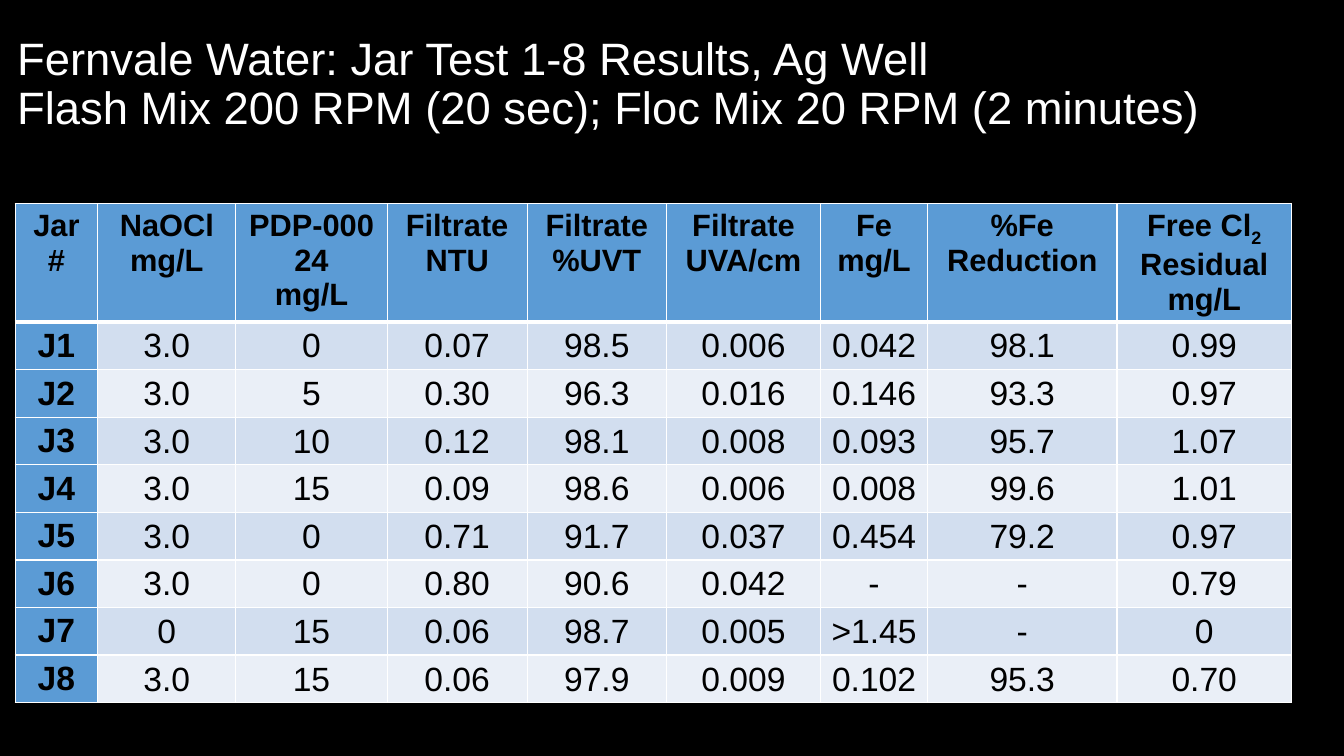
from copy import deepcopy
from pptx import Presentation, util as u
from pptx.dml.color import RGBColor
from pptx.enum import text as t
from pptx.oxml import parse_xml
from pptx.oxml.ns import nsdecls, qn


def write(frame, words, size, hue, bold=False, align=t.PP_ALIGN.LEFT, space=1):
    """Newline starts a paragraph, \\v breaks a line, _ lowers what follows."""
    frame.clear()
    for i, line in enumerate(words.split("\n")):
        para = frame.paragraphs[0] if i == 0 else frame.add_paragraph()
        para.alignment, para.line_spacing = align, space
        for j, part in enumerate(line.split("\v")):
            if j:
                para.add_line_break()
            for k, piece in enumerate(part.split("_")):
                run = para.add_run()
                run.text = piece
                font = run.font
                font.name, font.size, font.bold = "Arial", u.Pt(size), bold
                font.color.rgb = RGBColor.from_string(hue)
                if k:
                    run._r.get_or_add_rPr().set("baseline", "-25000")
        # Line breaks take the format of the text
        for gap in para._p.findall(qn("a:br")):
            gap.append(deepcopy(para.runs[0]._r.rPr))


def edge(cell, top, base):
    """Draw white borders; top and base widths in points."""
    for side, width in (("L", 1), ("R", 1), ("T", top), ("B", base)):
        cell._tc.get_or_add_tcPr().append(parse_xml(
            f'<a:ln{side} {nsdecls("a")} w="{u.Pt(width)}"><a:solidFill>'
            f'<a:srgbClr val="FFFFFF"/></a:solidFill></a:ln{side}>'))


# Slide with black ground
deck = Presentation()
deck.slide_width, deck.slide_height = u.Inches(13.33), u.Inches(7.5)
slide = deck.slides.add_slide(deck.slide_layouts[5])
ground = slide.background.fill
ground.solid()
ground.fore_color.rgb = RGBColor.from_string("000000")

# Title
title = slide.shapes.title
title.left, title.top = u.Inches(0.07), u.Inches(0.12)
title.width, title.height = u.Inches(13.03), u.Inches(1.45)
title.text_frame.vertical_anchor = t.MSO_ANCHOR.MIDDLE
title.text_frame.auto_size = t.MSO_AUTO_SIZE.NONE
write(title.text_frame, "Fernvale Water: Jar Test 1-8 Results, Ag Well\v"
      "Flash Mix 200 RPM (20 sec); Floc Mix 20 RPM (2 minutes)",
      32.4, "FFFFFF", space=0.9)

# Jar test results
heads = ["Jar\n#", "NaOCl\nmg/L", "PDP-00024\nmg/L", "Filtrate\nNTU",
         "Filtrate\n%UVT", "Filtrate\nUVA/cm", "Fe\nmg/L", "%Fe\nReduction",
         "Free Cl_2\nResidual\nmg/L"]
jars = """
J1 3.0 0 0.07 98.5 0.006 0.042 98.1 0.99
J2 3.0 5 0.30 96.3 0.016 0.146 93.3 0.97
J3 3.0 10 0.12 98.1 0.008 0.093 95.7 1.07
J4 3.0 15 0.09 98.6 0.006 0.008 99.6 1.01
J5 3.0 0 0.71 91.7 0.037 0.454 79.2 0.97
J6 3.0 0 0.80 90.6 0.042 - - 0.79
J7 0 15 0.06 98.7 0.005 >1.45 - 0
J8 3.0 15 0.06 97.9 0.009 0.102 95.3 0.70
"""
rows = [heads] + [line.split() for line in jars.strip().splitlines()]
wide = [0.82, 1.37, 1.5, 1.39, 1.38, 1.53, 1.06, 1.88, 1.73]
high = [1.04] + [0.44] * (len(rows) - 1)

# Table grid
grid = slide.shapes.add_table(
    len(rows), len(heads), u.Inches(0.15), u.Inches(2.02),
    u.Inches(sum(wide)), u.Inches(sum(high))).table
grid.first_col = True
for col, width in zip(grid.columns, wide):
    col.width = u.Inches(width)
for row, height in zip(grid.rows, high):
    row.height = u.Inches(height)

# Cells: blue head row and first column, banded body
for r, row in enumerate(rows):
    for c, words in enumerate(row):
        cell = grid.cell(r, c)
        head = r == 0 or c == 0
        edge(cell, 3 if r == 1 else 1, 3 if r == 0 else 1)
        cell.fill.solid()
        cell.fill.fore_color.rgb = RGBColor.from_string(
            "5B9BD5" if head else "D2DEEF" if r % 2 else "EAEFF7")
        if not head:
            cell.vertical_anchor = t.MSO_ANCHOR.MIDDLE
            cell.margin_left = cell.margin_right = u.Inches(0.01)
            cell.margin_top, cell.margin_bottom = u.Inches(0.01), 0
        write(cell.text_frame, words, 24 if r else 22, "000000",
              bold=head, align=t.PP_ALIGN.CENTER)

deck.save("out.pptx")
